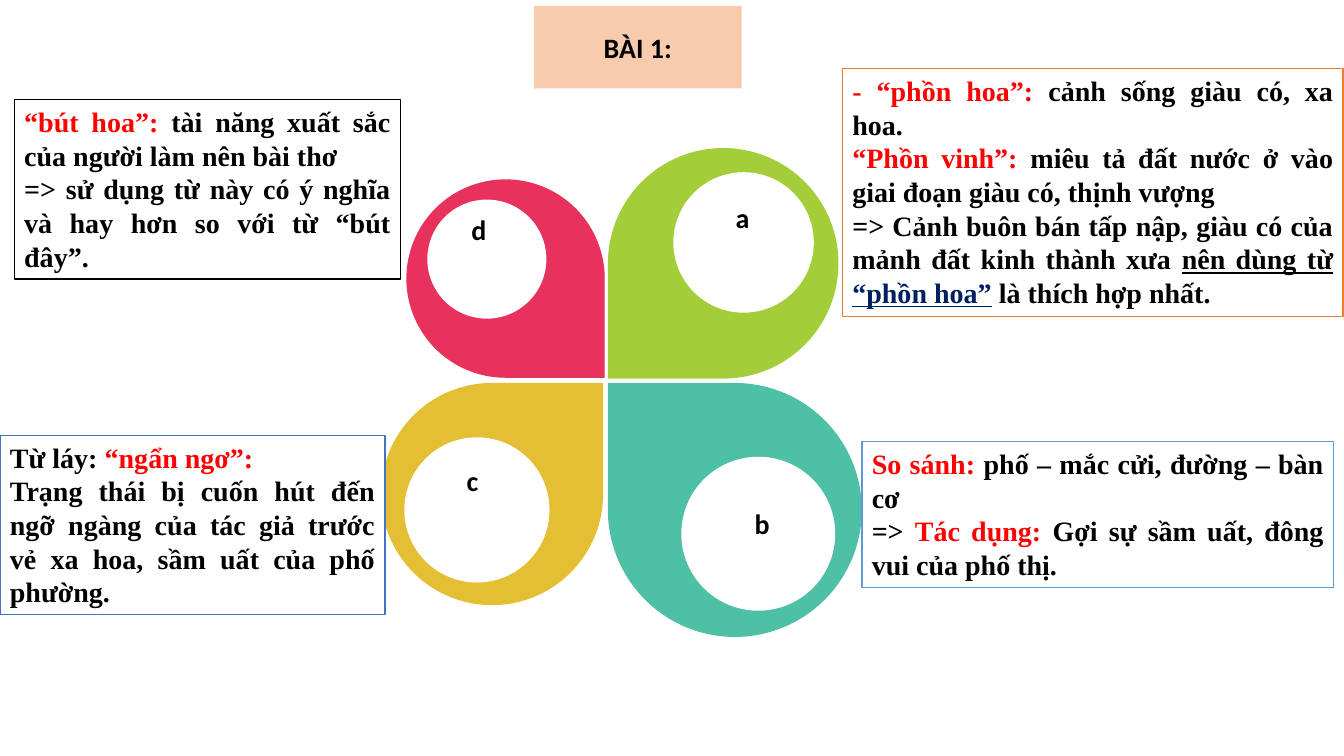
from pptx import Presentation
from pptx.dml.color import RGBColor
from pptx.enum.shapes import MSO_SHAPE
from pptx.enum.text import MSO_ANCHOR, MSO_AUTO_SIZE, PP_ALIGN
from pptx.util import Cm, Pt

TEARDROP, OVAL, RECTANGLE = MSO_SHAPE.TEAR, MSO_SHAPE.OVAL, MSO_SHAPE.RECTANGLE
TOP, MIDDLE = MSO_ANCHOR.TOP, MSO_ANCHOR.MIDDLE
GROW = MSO_AUTO_SIZE.SHAPE_TO_FIT_TEXT
CENTER, JUSTIFY = PP_ALIGN.CENTER, PP_ALIGN.JUSTIFY

BLACK = RGBColor(0x00, 0x00, 0x00)
WHITE = RGBColor(0xFF, 0xFF, 0xFF)
RED = RGBColor(0xFF, 0x00, 0x00)
NAVY = RGBColor(0x00, 0x20, 0x60)
PEACH = RGBColor(0xF8, 0xCB, 0xAD)
PINK = RGBColor(0xE6, 0x32, 0x5C)
YELLOW = RGBColor(0xE4, 0xBE, 0x33)
GREEN = RGBColor(0xA3, 0xCD, 0x39)
TEAL = RGBColor(0x4E, 0xC0, 0xA5)
SKY = RGBColor(0x5B, 0x9B, 0xD5)
BLUE = RGBColor(0x44, 0x72, 0xC4)
ORANGE = RGBColor(0xED, 0x7D, 0x31)

LABEL_FONT, ANSWER_FONT = "Calibri", "Times New Roman"

# letter, colour, rotation, petal (left, top, size), hole, letter (left, top, width)
PETALS = [
    ("d", PINK, 90, (10.24, 4.52, 5), (10.77, 5.03, 3), (11.63, 5.23, 0.89)),
    ("c", YELLOW, 0, (9.6, 9.65, 5.6), (10.19, 11.02, 3.66), (11.51, 11.56, 0.81)),
    ("a", GREEN, 180, (15.32, 3.73, 5.81), (16.97, 4.34, 3.54), (18.29, 4.93, 0.84)),
    ("b", TEAL, 270, (15.32, 9.65, 6.4), (17.17, 11.51, 3.88), (18.77, 12.65, 0.89)),
]

# box, outline, paragraphs of (text, colour, underlined)
ANSWERS = [
    ((21.72, 11.13, 11.89, 3.68), SKY, [
        [("So sánh: ", RED, False), ("phố – mắc cửi, đường – bàn cơ", BLACK, False)],
        [("=> ", BLACK, False), ("Tác dụng: ", RED, False),
         ("Gợi sự sầm uất, đông vui của phố thị.", BLACK, False)],
    ]),
    ((0, 10.97, 9.7, 4.52), BLUE, [
        [("Từ láy: ", BLACK, False), ("“ngẩn ngơ”:", RED, False)],
        [("Trạng thái bị cuốn hút đến ngỡ ngàng của tác giả trước vẻ xa hoa, "
          "sầm uất của phố phường.", BLACK, False)],
    ]),
    ((0.36, 2.51, 9.73, 4.52), BLACK, [
        [("“bút hoa”: ", RED, False),
         ("tài năng xuất sắc của người làm nên bài thơ", BLACK, False)],
        [("=> sử dụng từ này có ý nghĩa và hay hơn so với từ “bút đây”.", BLACK, False)],
    ]),
    ((21.23, 1.73, 12.62, 6.25), ORANGE, [
        [("- “phồn hoa”: ", RED, False), ("cảnh sống giàu có, xa hoa.", BLACK, False)],
        [("“Phồn vinh”: ", RED, False),
         ("miêu tả đất nước ở vào giai đoạn giàu có, thịnh vượng", BLACK, False)],
        [("=> Cảnh buôn bán tấp nập, giàu có của mảnh đất kinh thành xưa ", BLACK, False),
         ("nên dùng từ ", BLACK, True), ("“phồn hoa”", NAVY, True),
         (" là thích hợp nhất.", BLACK, False)],
    ]),
]


def style_paragraph(paragraph, font_name, alignment):
    """Give a paragraph the slide's bold 20 pt lettering."""
    paragraph.alignment = alignment
    paragraph.font.name = font_name
    paragraph.font.size = Pt(20)
    paragraph.font.bold = True
    paragraph.font.color.rgb = BLACK


def place_title(title):
    """Format the title placeholder as the exercise heading."""
    title.left, title.top, title.width, title.height = map(Cm, (13.46, 0.15, 5.23, 2.08))
    title.fill.solid()
    title.fill.fore_color.rgb = PEACH
    title.text_frame.text = "BÀI 1:"
    title.text_frame.vertical_anchor = MIDDLE
    style_paragraph(title.text_frame.paragraphs[0], LABEL_FONT, CENTER)


def add_filled(slide, kind, box, colour):
    """Add a preset shape with a plain fill and no outline."""
    shape = slide.shapes.add_shape(kind, *map(Cm, box))
    shape.shadow.inherit = False
    shape.fill.solid()
    shape.fill.fore_color.rgb = colour
    shape.line.fill.background()
    return shape


def add_petal(slide, letter, colour, rotation, petal_box, hole_box, letter_box):
    """Add a petal with its white disc and letter."""
    for kind, (left, top, size), fill, turn in (
        (TEARDROP, petal_box, colour, rotation),
        (OVAL, hole_box, WHITE, 0),
    ):
        add_filled(slide, kind, (left, top, size, size), fill).rotation = turn
    label = slide.shapes.add_textbox(*map(Cm, (*letter_box, 1.12))).text_frame
    label.word_wrap = False
    label.auto_size = GROW
    label.text = letter
    style_paragraph(label.paragraphs[0], LABEL_FONT, JUSTIFY)


def add_answer(slide, box, outline, paragraphs):
    """Add an outlined answer box with coloured phrases."""
    answer = add_filled(slide, RECTANGLE, box, WHITE)
    answer.line.color.rgb = outline
    answer.line.width = Pt(1)
    frame = answer.text_frame
    frame.word_wrap = True
    frame.auto_size = GROW
    frame.vertical_anchor = TOP
    for index, phrases in enumerate(paragraphs):
        paragraph = frame.add_paragraph() if index else frame.paragraphs[0]
        style_paragraph(paragraph, ANSWER_FONT, JUSTIFY)
        for text, colour, underlined in phrases:
            phrase = paragraph.add_run()
            phrase.text = text
            phrase.font.color.rgb = colour
            if underlined:
                phrase.font.underline = True


def main():
    """Build the exercise slide and save it."""
    deck = Presentation()
    deck.slide_width, deck.slide_height = Cm(33.87), Cm(19.05)
    slide = deck.slides.add_slide(deck.slide_layouts[5])
    place_title(slide.shapes.title)
    for petal in PETALS:
        add_petal(slide, *petal)
    for answer in ANSWERS:
        add_answer(slide, *answer)
    deck.save("out.pptx")


if __name__ == "__main__":
    main()
